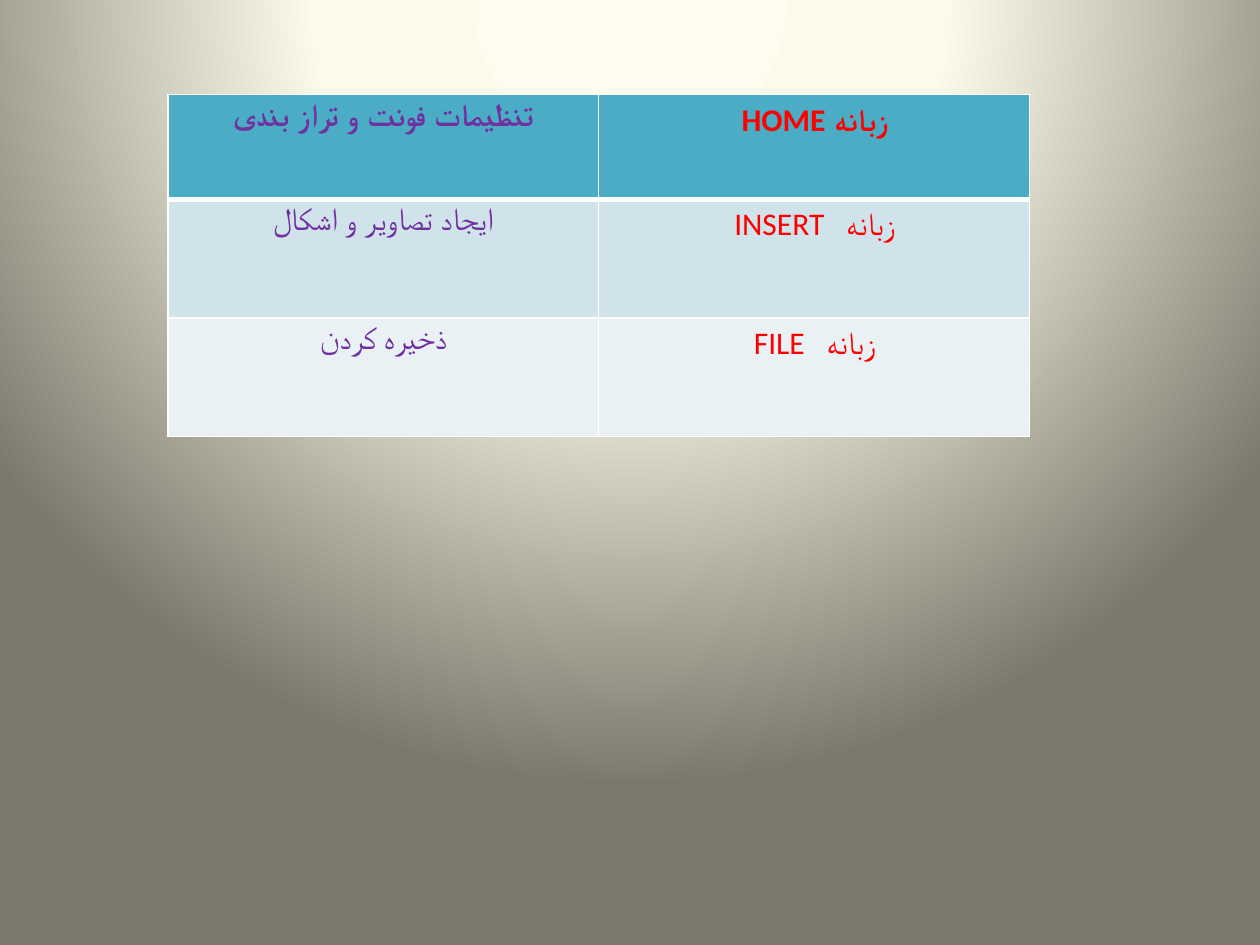
from lxml.etree import SubElement
from pptx import Presentation
from pptx.dml.color import RGBColor
from pptx.enum.text import PP_ALIGN
from pptx.oxml.ns import qn
from pptx.util import Cm, Pt

# Each cell is a list of words or phrases set apart by a gap
ROWS = [
    (["تنظیمات فونت و تراز بندی"], ["زبانه HOME"]),
    (["ایجاد تصاویر و اشکال"], ["زبانه", "INSERT"]),
    (["ذخیره کردن"], ["زبانه", "FILE"]),
]
ROW_HEIGHTS = [Cm(2.11), Cm(2.39), Cm(2.39)]
COL_WIDTH = Cm(8.68)
LEFT, TOP = Cm(3.39), Cm(1.91)

WHITE = RGBColor(0xFF, 0xFF, 0xFF)
ROW_FILLS = [RGBColor(0x4B, 0xAC, 0xC6), RGBColor(0xD0, 0xE3, 0xEA),
             RGBColor(0xE9, 0xF1, 0xF5)]
COL_COLORS = [RGBColor(0x70, 0x30, 0xA0), RGBColor(0xFF, 0x00, 0x00)]
BACKGROUND = [(0, RGBColor(0xFE, 0xFC, 0xEE)), (40, RGBColor(0xFD, 0xFA, 0xEA)),
              (100, RGBColor(0x7B, 0x79, 0x6B))]
GRADIENT_CENTRE = {"l": 50, "t": -80, "r": 50, "b": 180}
GAP_SPACING = Pt(8)


def add(parent, tag, **attrs):
    return SubElement(parent, qn(tag), {k: str(v) for k, v in attrs.items()})


def set_background(s):
    s.background.fill.gradient()
    grad = s.element.find(".//" + qn("a:gradFill"))
    for child in list(grad):
        grad.remove(child)
    stops = add(grad, "a:gsLst")
    for percent, color in BACKGROUND:
        add(add(stops, "a:gs", pos=percent * 1000), "a:srgbClr", val=color)
    circle = add(grad, "a:path", path="circle")
    add(circle, "a:fillToRect", **{k: v * 1000 for k, v in GRADIENT_CENTRE.items()})


def set_borders(cell, top, bottom):
    tc_pr = cell._tc.get_or_add_tcPr()
    for side, width in zip("LRTB", (1, 1, top, bottom)):
        ln = add(tc_pr, f"a:ln{side}", w=Pt(width))
        add(add(ln, "a:solidFill"), "a:srgbClr", val=WHITE)


def add_run(p, text, color, bold):
    r = p.add_run()
    r.text = text
    r.font.name = "Calibri"
    r.font.size = Pt(18)
    r.font.bold = bold
    r.font.color.rgb = color
    return r


def fill_cell(cell, parts, color, bold):
    p = cell.text_frame.paragraphs[0]
    p.alignment = PP_ALIGN.CENTER
    p._p.get_or_add_pPr().set("rtl", "1")
    for i, part in enumerate(parts):
        if i:
            gap = add_run(p, " ", color, bold)
            gap.font._element.set("spc", str(int(GAP_SPACING.pt * 100)))
        add_run(p, part, color, bold)


prs = Presentation()
prs.slide_width, prs.slide_height = Cm(25.4), Cm(19.05)
s = prs.slides.add_slide(prs.slide_layouts[6])
set_background(s)

table = s.shapes.add_table(len(ROWS), len(COL_COLORS), LEFT, TOP,
                           COL_WIDTH * len(COL_COLORS), sum(ROW_HEIGHTS)).table
for col in table.columns:
    col.width = COL_WIDTH
for i, row in enumerate(ROWS):
    table.rows[i].height = ROW_HEIGHTS[i]
    for j, parts in enumerate(row):
        cell = table.cell(i, j)
        set_borders(cell, top=3 if i == 1 else 1, bottom=3 if i == 0 else 1)
        cell.fill.solid()
        cell.fill.fore_color.rgb = ROW_FILLS[i]
        fill_cell(cell, parts, COL_COLORS[j], bold=i == 0)

prs.save("out.pptx")
